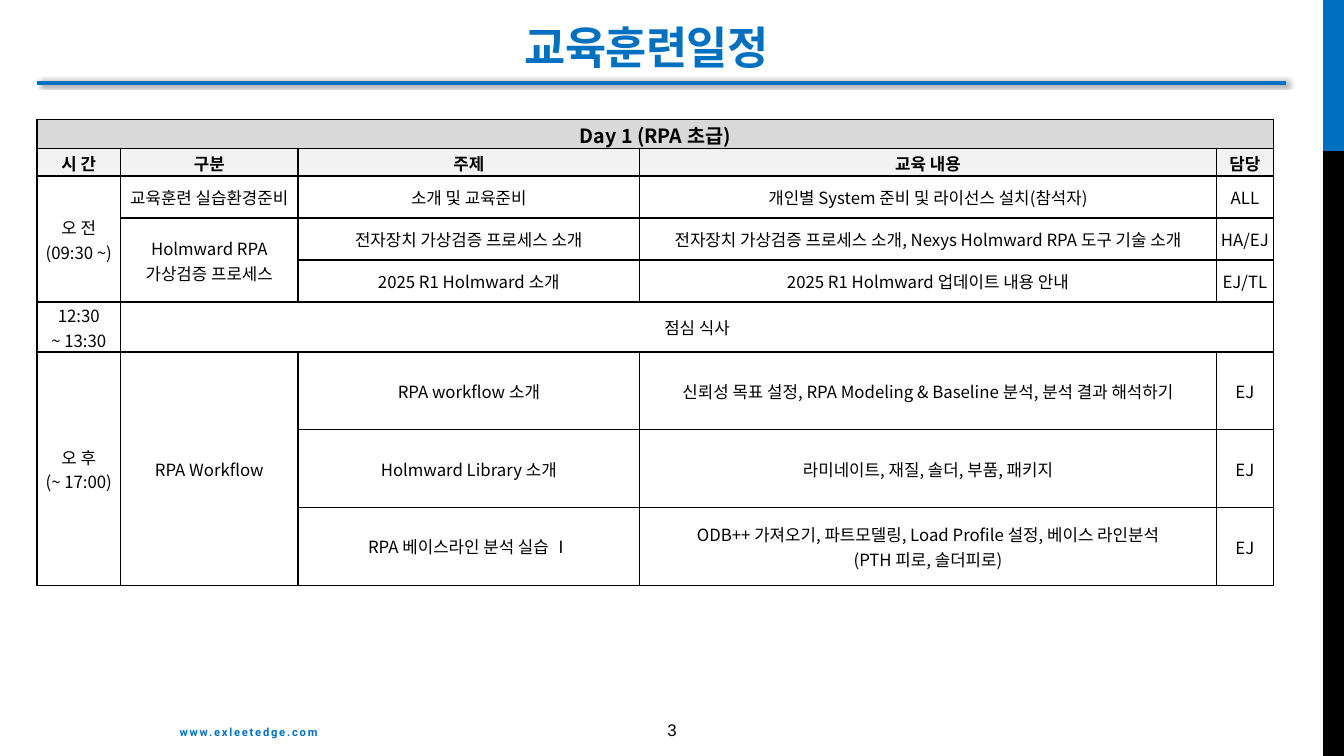
import pptx
import pptx.util
import pptx.dml.color
import pptx.enum.shapes
import pptx.enum.text
import pptx.oxml
import pptx.oxml.ns

Pt = pptx.util.Pt
ALIGN = pptx.enum.text.PP_ALIGN
MIDDLE = pptx.enum.text.MSO_ANCHOR.MIDDLE
KOREAN = "Noto Sans CJK KR"
BLUE, BLACK = "0070C0", "000000"
DRAWING = pptx.oxml.ns.nsdecls("a")

COLUMN_WIDTHS = [59.8, 126.7, 244.1, 411.8, 41]
ROW_HEIGHTS = [20.8, 19.8] + [30] * 3 + [35.7] + [55.6] * 3
SCHEDULE = [
    ["Day 1 (RPA 초급)", None, None, None, None],
    ["시 간", "구분", "주제", "교육 내용", "담당"],
    ["오 전\n(09:30 ~)", "교육훈련 실습환경준비", "소개 및 교육준비",
     "개인별 System 준비 및 라이선스 설치(참석자)", "ALL"],
    [None, "Holmward RPA 가상검증 프로세스", "전자장치 가상검증 프로세스 소개",
     "전자장치 가상검증 프로세스 소개, Nexys Holmward RPA 도구 기술 소개", "HA/EJ"],
    [None, None, "2025 R1 Holmward 소개", "2025 R1 Holmward 업데이트 내용 안내", "EJ/TL"],
    ["12:30\n~ 13:30", "점심 식사", None, None, None],
    ["오 후\n(~ 17:00)", "RPA Workflow", "RPA workflow 소개",
     "신뢰성 목표 설정, RPA Modeling & Baseline 분석, 분석 결과 해석하기", "EJ"],
    [None, None, "Holmward Library 소개", "라미네이트, 재질, 솔더, 부품, 패키지", "EJ"],
    [None, None, "RPA 베이스라인 분석 실습 Ⅰ",
     "ODB++ 가져오기, 파트모델링, Load Profile 설정, 베이스 라인분석\n(PTH 피로, 솔더피로)", "EJ"],
]
# First and last cell of each merged area
MERGES = [((0, 0), (0, 4)), ((2, 0), (4, 0)), ((3, 1), (4, 1)),
          ((5, 1), (5, 4)), ((6, 0), (8, 0)), ((6, 1), (8, 1))]
ROW_FILLS = {0: "D9D9D9", 1: "F2F2F2"}


def rgb(hex_colour):
    return pptx.dml.color.RGBColor.from_string(hex_colour)


def set_attributes(target, values):
    for name, value in values.items():
        setattr(target, name, value)


def write_text(frame, text, font, colour, align=ALIGN.CENTER, spacing=None, after=0):
    """Fill a frame, one paragraph per line; spacing is in hundredths of a point."""
    frame.text = text
    for paragraph in frame.paragraphs:
        set_attributes(paragraph, {"alignment": align, "space_before": Pt(0),
                                   "space_after": Pt(after)})
        for run in paragraph.runs:
            set_attributes(run.font, font)
            run.font.color.rgb = rgb(colour)
            properties = run._r.get_or_add_rPr()
            if spacing:
                properties.set("spc", str(spacing))
            properties.append(pptx.oxml.parse_xml(
                f'<a:ea {DRAWING} typeface="{KOREAN}"/>'))


def margins(horizontal, top, bottom):
    return {"margin_left": Pt(horizontal), "margin_right": Pt(horizontal),
            "margin_top": Pt(top), "margin_bottom": Pt(bottom)}


def add_side_band(slide, left, top, width, height):
    blue_height = height / 5
    for colour, offset, part_height in ((BLUE, 0, blue_height),
                                        (BLACK, blue_height, height - blue_height)):
        band = slide.shapes.add_shape(
            pptx.enum.shapes.MSO_SHAPE.RECTANGLE,
            Pt(left), Pt(top + offset), Pt(width), Pt(part_height))
        band.shadow.inherit = False
        band.fill.solid()
        band.fill.fore_color.rgb = rgb(colour)
        band.line.fill.background()


def add_heading(slide, left, top, width, height):
    title = slide.shapes.title
    set_attributes(title, {"left": Pt(left), "top": Pt(top),
                           "width": Pt(width), "height": Pt(height)})
    set_attributes(title.text_frame, {"vertical_anchor": MIDDLE, "word_wrap": True,
                                      "auto_size": pptx.enum.text.MSO_AUTO_SIZE.NONE,
                                      **margins(7.9, 4.3, 4.3)})
    write_text(title.text_frame, "교육훈련일정",
               {"name": "Arial", "size": Pt(32), "bold": True}, BLUE, spacing=-60)

    rule_top = top + height + 5.2
    rule = slide.shapes.add_connector(
        pptx.enum.shapes.MSO_CONNECTOR.STRAIGHT,
        Pt(left), Pt(rule_top), Pt(left + 892), Pt(rule_top))
    rule.line.color.rgb = rgb(BLUE)
    rule.line.width = Pt(3.25)
    rule._element.spPr.append(pptx.oxml.parse_xml(
        f'<a:effectLst {DRAWING}><a:outerShdw blurRad="{Pt(3.1)}" dist="{Pt(1.8)}" '
        f'dir="0" algn="l" rotWithShape="0"><a:srgbClr val="{BLACK}">'
        '<a:alpha val="40000"/></a:srgbClr></a:outerShdw></a:effectLst>'))


def add_borders(cell):
    properties = cell._tc.get_or_add_tcPr()
    for side in "LRTB":
        properties.append(pptx.oxml.parse_xml(
            f'<a:ln{side} {DRAWING} w="{Pt(1)}"><a:solidFill>'
            f'<a:srgbClr val="{BLACK}"/></a:solidFill></a:ln{side}>'))


def format_cell(cell, row, column):
    roomy = row >= 2 and column in (2, 3)
    set_attributes(cell, {"vertical_anchor": MIDDLE,
                          **(margins(10.8, 6, 6) if roomy else margins(0.7, 0.7, 0))})
    add_borders(cell)
    if row in ROW_FILLS:
        cell.fill.solid()
        cell.fill.fore_color.rgb = rgb(ROW_FILLS[row])
    else:
        cell.fill.background()


def add_schedule(slide, left, top, width, height):
    table = slide.shapes.add_table(len(ROW_HEIGHTS), len(COLUMN_WIDTHS),
                                   Pt(left), Pt(top), Pt(width), Pt(height)).table
    set_attributes(table, {"first_row": False, "horz_banding": False})
    for column, column_width in zip(table.columns, COLUMN_WIDTHS):
        column.width = Pt(column_width)
    for row, row_height in zip(table.rows, ROW_HEIGHTS):
        row.height = Pt(row_height)
    for first, last in MERGES:
        table.cell(*first).merge(table.cell(*last))
    for r, entries in enumerate(SCHEDULE):
        for c, entry in enumerate(entries):
            cell = table.cell(r, c)
            format_cell(cell, r, c)
            if entry:
                write_text(cell.text_frame, entry,
                           {"name": KOREAN, "size": Pt(14 if r == 0 else 12),
                            "bold": r in ROW_FILLS}, BLACK)


def add_footer(slide, left, top, width, height):
    address = slide.shapes.add_textbox(Pt(left), Pt(top + 3.6), Pt(174), Pt(height))
    set_attributes(address.text_frame, {"word_wrap": True, **margins(7.9, 4.3, 4.3)})
    write_text(address.text_frame, "www.exleetedge.com",
               {"name": "Roboto", "size": Pt(8), "bold": True}, BLUE,
               align=ALIGN.LEFT, spacing=125, after=6.2)

    number_width = 61
    page_number = slide.shapes.add_textbox(
        Pt(left + width - number_width), Pt(top), Pt(number_width), Pt(24.5))
    page_number.text_frame.word_wrap = True
    write_text(page_number.text_frame, "3", {"name": "Arial", "size": Pt(12)},
               BLACK, after=6.2)


def main():
    deck = pptx.Presentation()
    set_attributes(deck, {"slide_width": Pt(960), "slide_height": Pt(540)})
    slide = deck.slides.add_slide(deck.slide_layouts[5])
    add_side_band(slide, 945, 0, 15, 540)
    add_footer(slide, 120.5, 510.5, 390, 29)
    add_heading(slide, 26.6, 12.2, 870.5, 41.8)
    add_schedule(slide, 26.4, 85.2, sum(COLUMN_WIDTHS), sum(ROW_HEIGHTS))
    deck.save("out.pptx")


if __name__ == "__main__":
    main()
